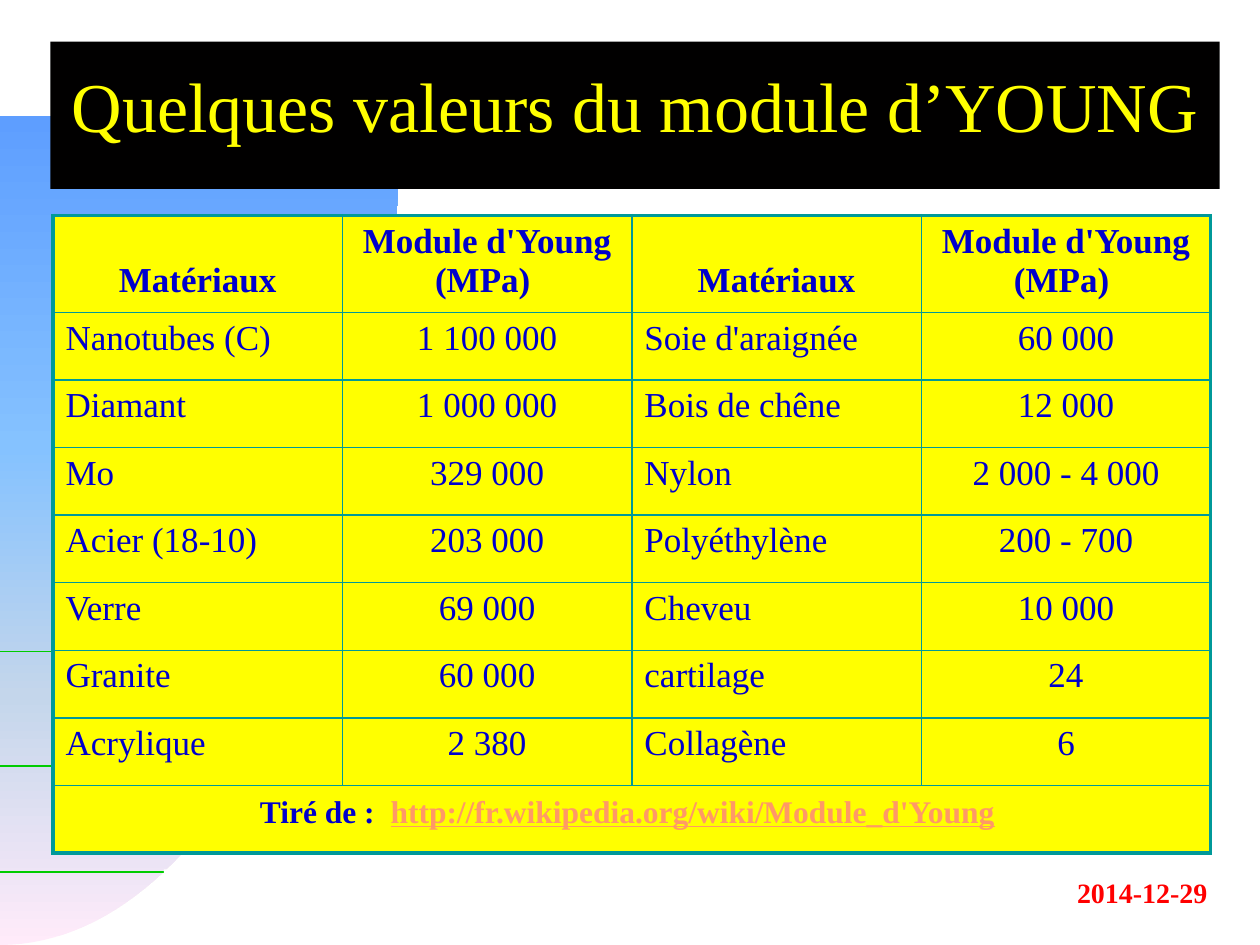
from copy import deepcopy
from typing import NamedTuple

from lxml import etree
from pptx import Presentation
from pptx import util as u
from pptx.dml.color import RGBColor
from pptx.enum import shapes, text
from pptx.oxml.ns import qn

WIDE, HIGH = u.Inches(10), u.Inches(7.5)
FONT = "Times New Roman"
YELLOW, BLUE, TEAL = "FFFF00", "0000CC", "009999"
COLS = 4
HEAD = ["Matériaux", "Module d'Young\v(MPa) "] * 2
DATA = [
    ["Nanotubes (C)", "1 100 000", "Soie d'araignée", "60 000"],
    ["Diamant", "1 000 000", "Bois de chêne", "12 000"],
    ["Mo", "329 000", "Nylon", "2 000 - 4 000"],
    ["Acier (18-10)", "203 000", "Polyéthylène", "200 - 700"],
    ["Verre", "69 000", "Cheveu", "10 000"],
    ["Granite", "60 000", "cartilage", "24"],
    ["Acrylique", "2 380", "Collagène", "6"],
]
SHADES = [(0, "FFEBFA"), (0.3, "C4D6EB"), (0.6, "85C2FF"), (1, "5E9EFF")]


class Box(NamedTuple):
    """A place on the slide, in percent of its width and height."""
    x: float
    y: float
    w: float
    h: float

    def frame(self) -> tuple:
        return (across(self.x), down(self.y), across(self.w), down(self.h))


class Rule(NamedTuple):
    y: float
    end: float


class Look(NamedTuple):
    size: int
    tint: str
    bold: bool = False
    under: bool = False


RULES = [Rule(92.27, 13.3), Rule(81.07, 19.2), Rule(68.93, 24.2)]
ARC = Box(0, 12.27, 31.7, 87.73)
PATCH = Box(13, 92, 18.8, 4.93)
STAMP = Box(74.3, 92, 22.5, 4.93)
TITLE = Box(4, 4.4, 92.8, 15.6)
GRID = Box(4.2, 22.8, 91.9, 67.47)
TOP = 10.27  # header row, percent of slide height


def across(part: float) -> int:
    return int(WIDE * part / 100)


def down(part: float) -> int:
    return int(HIGH * part / 100)


def color(code: str) -> RGBColor:
    return RGBColor.from_string(code)


def paint(fill, code: str) -> None:
    fill.solid()
    fill.fore_color.rgb = color(code)


def style(run, look: Look) -> None:
    font = run.font
    font.name, font.size = FONT, u.Pt(look.size)
    font.bold, font.underline = look.bold, look.under
    font.color.rgb = color(look.tint)


def write(frame, words: str, look: Look, align) -> None:
    para = frame.paragraphs[0]
    para.text = words
    para.alignment = align
    for run in para.runs:
        style(run, look)


def draw_arc(slide, box: Box, steps: int = 60) -> None:
    """Fill the area under a Bezier arc with the shaded colours."""
    left, top, wide, high = box.frame()
    ends = [(0, 1), (0.55, 1), (1, 0.55), (1, 0)]
    points = []
    for step in range(steps + 1):
        t = step / steps
        parts = ((1 - t) ** 3, 3 * t * (1 - t) ** 2, 3 * t * t * (1 - t), t ** 3)
        x, y = (sum(p * end[axis] for p, end in zip(parts, ends)) for axis in (0, 1))
        points.append((left + int(wide * x), top + int(high * y)))
    pen = slide.shapes.build_freeform(*points[0])
    pen.add_line_segments(points[1:] + [(left, top)], close=True)
    arc = pen.convert_to_shape()
    arc.shadow.inherit = False
    arc.line.fill.background()
    arc.fill.gradient()
    arc.fill.gradient_angle = 90
    stops = arc._element.spPr.find(".//" + qn("a:gsLst"))
    while len(stops) < len(SHADES):
        stops.append(deepcopy(stops[0]))
    for stop, (place, code) in zip(arc.fill.gradient_stops, SHADES):
        stop.position = place
        stop.color.rgb = color(code)


def draw_rule(slide, rule: Rule) -> None:
    y = down(rule.y)
    line = slide.shapes.add_connector(
        shapes.MSO_CONNECTOR.STRAIGHT, 0, y, across(rule.end), y)
    line.line.color.rgb = color("00CC00")
    line.line.width = u.Pt(0.75)
    etree.SubElement(line._element.spPr, qn("a:effectLst"))


def draw_patch(slide, box: Box) -> None:
    patch = slide.shapes.add_shape(shapes.MSO_SHAPE.RECTANGLE, *box.frame())
    patch.shadow.inherit = False
    patch.line.fill.background()
    paint(patch.fill, "FFFFFF")


def draw_stamp(slide, box: Box) -> None:
    frame = slide.shapes.add_textbox(*box.frame()).text_frame
    frame.word_wrap = True
    write(frame, "2014-12-29", Look(16, "FF0000", True), text.PP_ALIGN.RIGHT)


def draw_title(slide, box: Box) -> None:
    title = slide.shapes.title
    title.left, title.top, title.width, title.height = box.frame()
    paint(title.fill, "010000")
    frame = title.text_frame
    frame.auto_size = text.MSO_AUTO_SIZE.NONE
    frame.vertical_anchor = text.MSO_ANCHOR.MIDDLE
    write(frame, "Quelques valeurs du module d’YOUNG", Look(40, YELLOW),
          text.PP_ALIGN.CENTER)
    frame.paragraphs[0].line_spacing = 0.7
    slide.shapes._spTree.append(title._element)


def edge(cell, side: str, width: float) -> None:
    props = cell._tc.get_or_add_tcPr()
    line = etree.SubElement(props, qn("a:ln" + side), w=str(u.Pt(width)))
    fill = etree.SubElement(line, qn("a:solidFill"))
    etree.SubElement(fill, qn("a:srgbClr"), val=TEAL)


def draw_table(slide, box: Box) -> None:
    rows = len(DATA) + 2
    table = slide.shapes.add_table(rows, COLS, *box.frame()).table
    table.first_row = table.horz_banding = False
    for col in table.columns:
        col.width = across(box.w / COLS)
    for r, row in enumerate(table.rows):
        row.height = down((box.h - TOP) / (rows - 1) if r else TOP)
        last = r == rows - 1  # its first cell spans the whole row
        for c, cell in enumerate(row.cells):
            outer = {"L": c == 0, "R": last or c == COLS - 1, "T": r == 0, "B": last}
            for side, thick in outer.items():
                edge(cell, side, 2.25 if thick else 1)
            paint(cell.fill, YELLOW)
    for r, words in enumerate([HEAD] + DATA):
        for c, word in enumerate(words):
            cell = table.cell(r, c)
            left = r > 0 and c % 2 == 0
            write(cell.text_frame, word, Look(20, BLUE, r == 0),
                  text.PP_ALIGN.LEFT if left else text.PP_ALIGN.CENTER)
            if r == 0:
                cell.vertical_anchor = text.MSO_ANCHOR.BOTTOM
                cell.margin_bottom = u.Inches(0.1)
    foot = table.cell(rows - 1, 0)
    foot.merge(table.cell(rows - 1, COLS - 1))
    write(foot.text_frame, "Tiré de :  ", Look(18, BLUE, True), text.PP_ALIGN.CENTER)
    for words, look in (
        ("http://fr.wikipedia.org/wiki/Module_d'Young", Look(18, "FF9966", True, True)),
        (" ", Look(20, BLUE)),
    ):
        run = foot.text_frame.paragraphs[0].add_run()
        run.text = words
        style(run, look)


def main() -> None:
    deck = Presentation()
    deck.slide_width, deck.slide_height = WIDE, HIGH
    slide = deck.slides.add_slide(deck.slide_layouts[5])
    paint(slide.background.fill, "FFFFFF")
    draw_arc(slide, ARC)
    for rule in RULES:
        draw_rule(slide, rule)
    draw_stamp(slide, STAMP)
    draw_patch(slide, PATCH)
    draw_title(slide, TITLE)
    draw_table(slide, GRID)
    deck.save("out.pptx")


if __name__ == "__main__":
    main()
